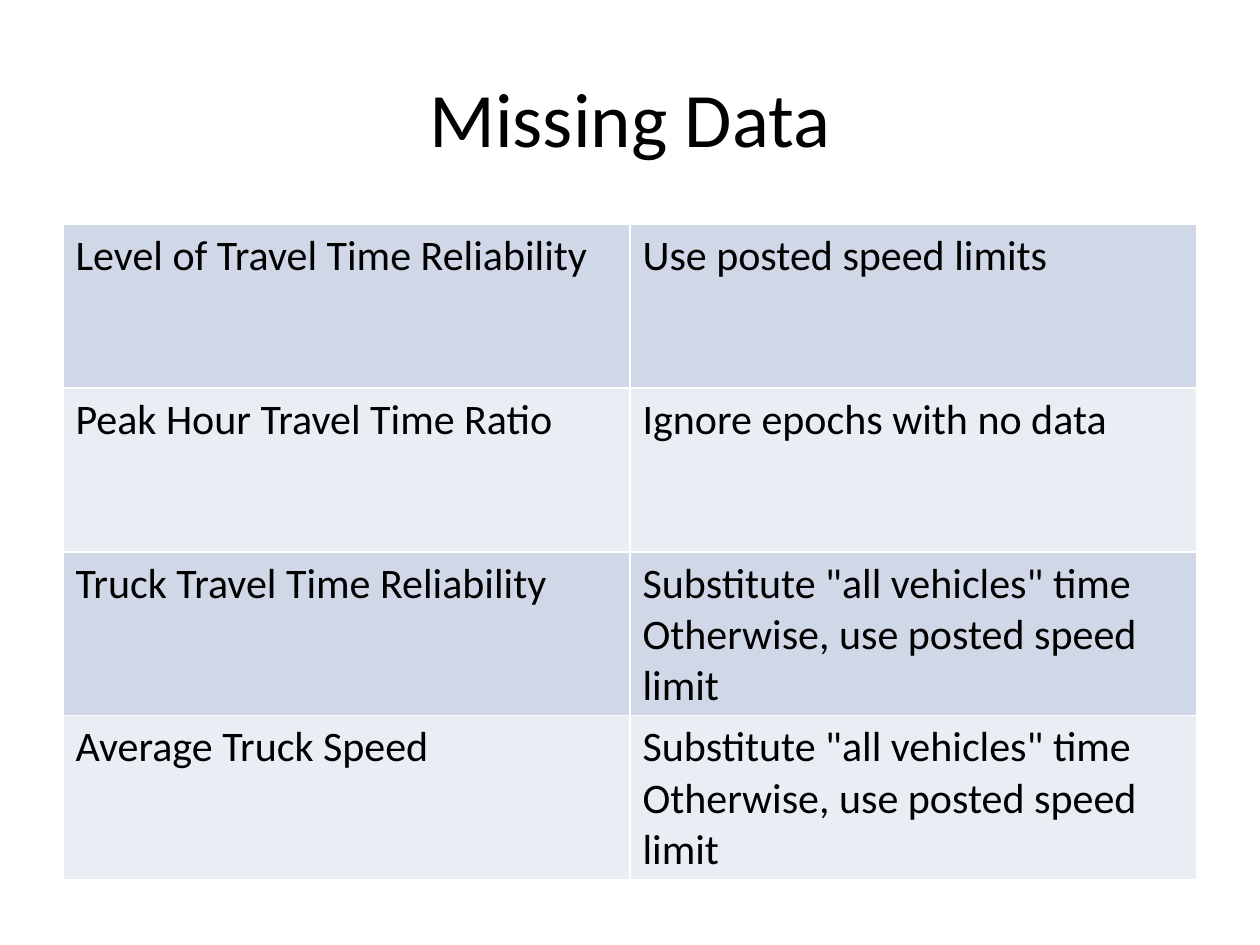
from lxml import etree
from pptx import Presentation
from pptx.dml.color import RGBColor
from pptx.enum.text import MSO_ANCHOR, PP_ALIGN
from pptx.oxml.ns import qn
from pptx.util import Pt

EMU_PER_PX = 9144
MIDDLE = MSO_ANCHOR.MIDDLE
CENTER = PP_ALIGN.CENTER
FONT = "Calibri"
BLACK = "000000"
WHITE = "FFFFFF"
BAND_FILLS = ("D0D8E8", "E9EDF4")
BORDER_SIDES = ("a:lnL", "a:lnR", "a:lnT", "a:lnB")

TRUCK_RULE = 'Substitute "all vehicles" time\nOtherwise, use posted speed limit'
MISSING_DATA_RULES = [
    ("Level of Travel Time Reliability", "Use posted speed limits"),
    ("Peak Hour Travel Time Ratio", "Ignore epochs with no data"),
    ("Truck Travel Time Reliability", TRUCK_RULE),
    ("Average Truck Speed", TRUCK_RULE),
]


def px(length):
    return length * EMU_PER_PX


def color(hex_string):
    return RGBColor.from_string(hex_string)


def write_text(text_frame, text, size, alignment=None):
    text_frame.word_wrap = True
    text_frame.text = text
    for paragraph in text_frame.paragraphs:
        paragraph.alignment = alignment
        paragraph.font.name = FONT
        paragraph.font.size = Pt(size)
        paragraph.font.color.rgb = color(BLACK)


def add_cell_borders(cell, hex_string, width):
    properties = cell._tc.get_or_add_tcPr()
    for position, side in enumerate(BORDER_SIDES):
        line = etree.Element(qn(side), w=str(Pt(width)))
        fill = etree.SubElement(line, qn("a:solidFill"))
        etree.SubElement(fill, qn("a:srgbClr"), val=hex_string)
        properties.insert(position, line)


def add_title(slide, left, top, width, height):
    shape = slide.shapes.add_textbox(px(left), px(top), px(width), px(height))
    write_text(shape.text_frame, "Missing Data", 44, CENTER)
    shape.text_frame.vertical_anchor = MIDDLE


def add_rules_table(slide, left, top, width, height):
    shape = slide.shapes.add_table(
        len(MISSING_DATA_RULES), 2, px(left), px(top), px(width), px(height)
    )
    table = shape.table
    table.first_row = False
    for row_index, texts in enumerate(MISSING_DATA_RULES):
        for column_index, text in enumerate(texts):
            cell = table.cell(row_index, column_index)
            write_text(cell.text_frame, text, 24)
            cell.fill.solid()
            cell.fill.fore_color.rgb = color(BAND_FILLS[row_index % 2])
            add_cell_borders(cell, WHITE, 1)


def main():
    presentation = Presentation()
    presentation.slide_width = px(1000)
    presentation.slide_height = px(750)
    slide = presentation.slides.add_slide(presentation.slide_layouts[6])
    add_title(slide, 50, 30, 900, 125)
    add_rules_table(slide, 50, 178, 900, 520)
    presentation.save("out.pptx")


if __name__ == "__main__":
    main()
